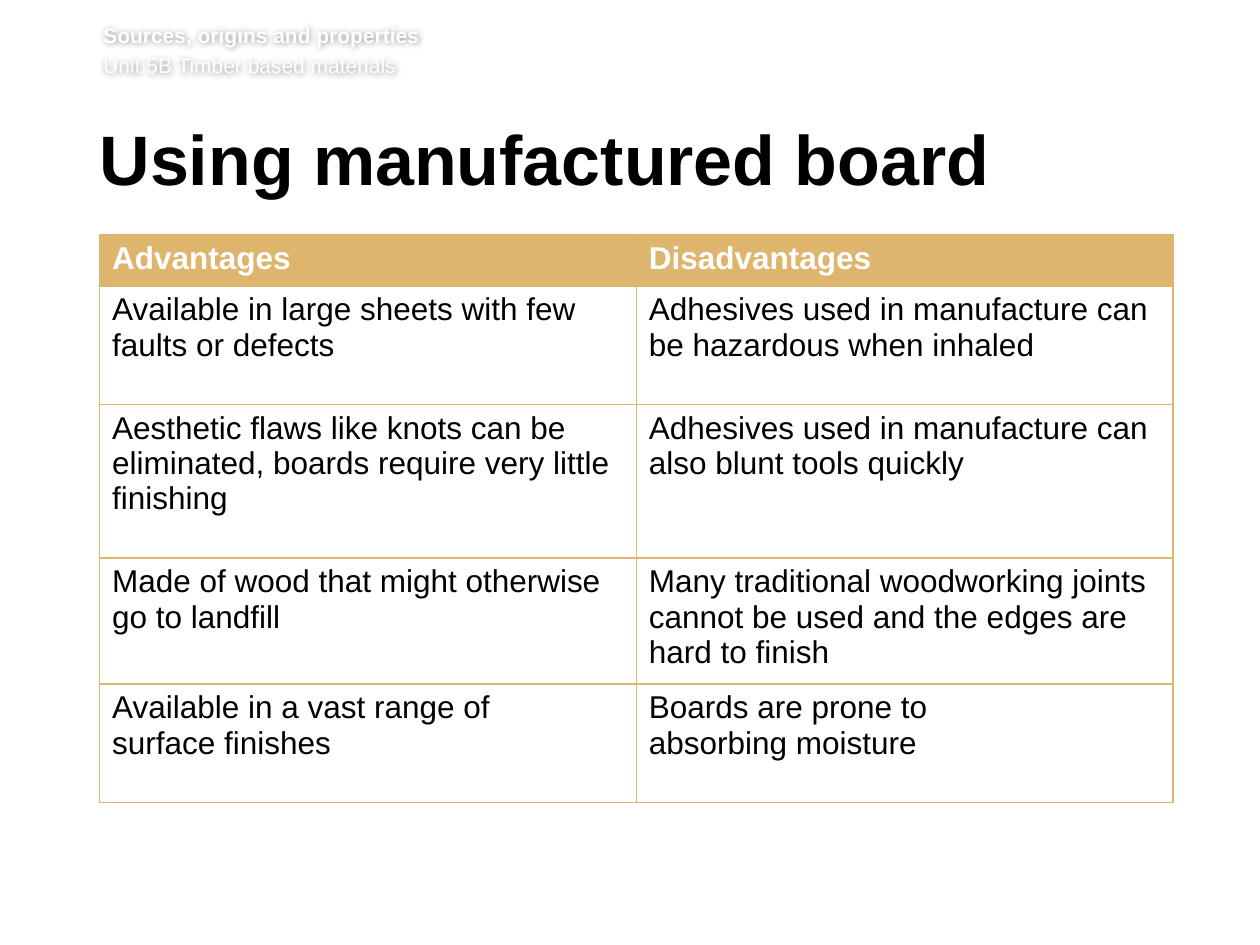
from lxml.etree import SubElement
from pptx import Presentation
from pptx.dml.color import RGBColor
from pptx.oxml.ns import qn
from pptx.util import Inches, Pt

COLORS = {"white": "FFFFFF", "black": "000000", "tan": "DDB56D"}

ROWS = [
    ("Advantages", "Disadvantages"),
    ("Available in large sheets with few faults or defects",
     "Adhesives used in manufacture can be hazardous when inhaled"),
    ("Aesthetic flaws like knots can be eliminated, boards require very little finishing",
     "Adhesives used in manufacture can also blunt tools quickly"),
    ("Made of wood that might otherwise go to landfill",
     "Many traditional woodworking joints cannot be used and the edges are hard to finish"),
    ("Available in a vast range of\vsurface finishes",
     "Boards are prone to\vabsorbing moisture"),
]
ROW_HEIGHTS = [0.41, 0.94, 1.22, 0.94, 0.94]
COL_WIDTH = 4.26


class SlideBuilder:
    font = "Arial"

    def __init__(self, prs):
        self.slide = prs.slides.add_slide(prs.slide_layouts[6])

    def format(self, p, size, color, bold):
        for r in p.runs:
            r.font.name = self.font
            r.font.size = Pt(size)
            r.font.bold = bold
            r.font.color.rgb = RGBColor.from_string(COLORS[color])

    def text(self, box, lines, size, color):
        """Add a text box whose first line is bold."""
        sp = self.slide.shapes.add_textbox(*map(Inches, box))
        tf = sp.text_frame
        tf.word_wrap = True
        tf.margin_left = tf.margin_right = tf.margin_top = tf.margin_bottom = 0
        tf.text = "\n".join(lines)
        for i, p in enumerate(tf.paragraphs):
            self.format(p, size, color, bold=i == 0)
        return sp

    def soft_shadow(self, sp):
        """Put a blurred, centred shadow behind the text."""
        effects = SubElement(sp._element.spPr, qn("a:effectLst"))
        shadow = SubElement(effects, qn("a:outerShdw"), blurRad=str(Pt(4)),
                            dist="0", dir="0", algn="ctr", rotWithShape="0")
        color = SubElement(shadow, qn("a:srgbClr"), val=COLORS["black"])
        SubElement(color, qn("a:alpha"), val="43000")

    def borders(self, cell, color):
        """Draw all four edges; must run before the cell is filled."""
        tcPr = cell._tc.get_or_add_tcPr()
        for edge in ("lnL", "lnR", "lnT", "lnB"):
            ln = SubElement(tcPr, qn(f"a:{edge}"), w=str(Pt(1)))
            fill = SubElement(ln, qn("a:solidFill"))
            SubElement(fill, qn("a:srgbClr"), val=COLORS[color])

    def table(self, left, top, rows, heights, col_width):
        cols = len(rows[0])
        table = self.slide.shapes.add_table(
            len(rows), cols, Inches(left), Inches(top),
            Inches(col_width * cols), Inches(sum(heights))).table
        for col in table.columns:
            col.width = Inches(col_width)
        for i, (texts, height) in enumerate(zip(rows, heights)):
            table.rows[i].height = Inches(height)
            header = i == 0
            for j, text in enumerate(texts):
                cell = table.cell(i, j)
                cell.text_frame.text = text
                self.format(cell.text_frame.paragraphs[0], 18,
                            "white" if header else "black", header)
                self.borders(cell, "tan")
                if header:
                    cell.fill.solid()
                    cell.fill.fore_color.rgb = RGBColor.from_string(COLORS["tan"])
                else:
                    cell.fill.background()


def main():
    prs = Presentation()
    prs.slide_width, prs.slide_height = Inches(10), Inches(7.5)
    s = SlideBuilder(prs)

    unit = s.text((0.82, 0.18, 8.82, 0.49),
                  ["Sources, origins and properties", "Unit 5B Timber based materials"],
                  12, "white")
    unit.text_frame.paragraphs[1].space_before = Pt(2.9)
    s.soft_shadow(unit)

    title = s.text((0.79, 0.99, 8.55, 0.73), ["Using manufactured board"], 40, "black")
    title.text_frame.margin_top = Inches(0.05)
    title.text_frame.paragraphs[0].line_spacing = Pt(39)

    s.table(0.79, 1.86, ROWS, ROW_HEIGHTS, COL_WIDTH)
    prs.save("out.pptx")


if __name__ == "__main__":
    main()
